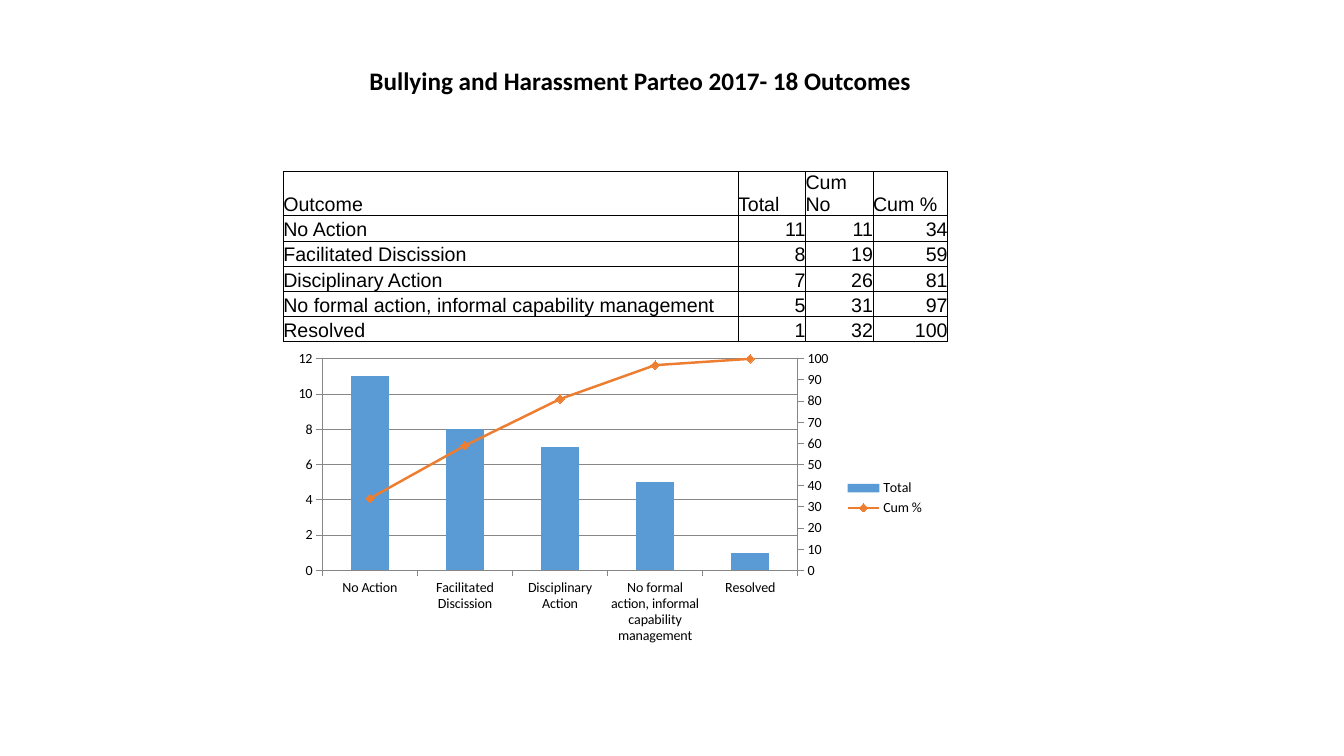
from dataclasses import dataclass

from lxml import etree
from pptx import Presentation
from pptx.chart.axis import ValueAxis
from pptx.chart.data import CategoryChartData
from pptx.dml.color import RGBColor
from pptx.enum.chart import XL_CHART_TYPE, XL_LEGEND_POSITION, XL_MARKER_STYLE, XL_TICK_MARK
from pptx.enum.text import MSO_ANCHOR, PP_ALIGN
from pptx.oxml import parse_xml
from pptx.oxml.ns import nsdecls, qn
from pptx.util import Inches, Pt

COLUMNS = XL_CHART_TYPE.COLUMN_CLUSTERED
LEGEND_RIGHT = XL_LEGEND_POSITION.RIGHT
DIAMOND = XL_MARKER_STYLE.DIAMOND
TICK_OUTSIDE = XL_TICK_MARK.OUTSIDE
TICK_NONE = XL_TICK_MARK.NONE
BOTTOM = MSO_ANCHOR.BOTTOM
LEFT, CENTER, RIGHT = PP_ALIGN.LEFT, PP_ALIGN.CENTER, PP_ALIGN.RIGHT


@dataclass(frozen=True)
class Theme:
    text: RGBColor = RGBColor(0, 0, 0)
    axis: RGBColor = RGBColor(0x86, 0x86, 0x86)
    bar: RGBColor = RGBColor(0x5B, 0x9B, 0xD5)
    line: RGBColor = RGBColor(0xED, 0x7D, 0x31)
    heading_font: str = "Calibri"
    table_font: str = "Arial"
    title_size: Pt = Pt(18)
    table_size: Pt = Pt(14)
    chart_size: Pt = Pt(10)


theme = Theme()


def write_text(frame, text, font, size, align=LEFT, bold=False):
    paragraph = frame.paragraphs[0]
    paragraph.alignment = align
    run = paragraph.add_run()
    run.text = text
    run.font.name = font
    run.font.size = size
    run.font.bold = bold
    run.font.color.rgb = theme.text


presentation = Presentation()
presentation.slide_width = Inches(13.33)
presentation.slide_height = Inches(7.5)
slide = presentation.slides.add_slide(presentation.slide_layouts[6])

headings = ["Outcome", "Total", "Cum No", "Cum %"]
outcomes = [
    ("No Action", 11, 11, 34),
    ("Facilitated Discission", 8, 19, 59),
    ("Disciplinary Action", 7, 26, 81),
    ("No formal action, informal capability management", 5, 31, 97),
    ("Resolved", 1, 32, 100),
]
column_widths = [4.51, 0.67, 0.67, 0.74]
row_heights = [0.44] + [0.25] * len(outcomes)

table = slide.shapes.add_table(
    len(row_heights), len(column_widths),
    Inches(2.81), Inches(1.7), Inches(sum(column_widths)), Inches(sum(row_heights)),
).table
table.first_row = False
table.horz_banding = False
for column, width in zip(table.columns, column_widths):
    column.width = Inches(width)
for row, height in zip(table.rows, row_heights):
    row.height = Inches(height)

for row, values in zip(table.rows, [headings, *outcomes]):
    for cell, value in zip(row.cells, values):
        cell.margin_left = cell.margin_right = cell.margin_top = cell.margin_bottom = 0
        cell.vertical_anchor = BOTTOM
        properties = cell._tc.get_or_add_tcPr()
        for side in ("lnL", "lnR", "lnT", "lnB"):
            border = etree.SubElement(properties, qn(f"a:{side}"), w=str(Pt(0.5)))
            border_fill = etree.SubElement(border, qn("a:solidFill"))
            etree.SubElement(border_fill, qn("a:srgbClr"), val=str(theme.text))
        cell.fill.background()
        align = RIGHT if isinstance(value, int) else LEFT
        write_text(cell.text_frame, str(value), theme.table_font, theme.table_size, align=align)

chart_data = CategoryChartData()
chart_data.categories = [outcome[0] for outcome in outcomes]
chart_data.add_series("Total", [outcome[1] for outcome in outcomes])
chart_data.add_series("Cum %", [outcome[3] for outcome in outcomes])
chart = slide.shapes.add_chart(
    COLUMNS, Inches(2.81), Inches(3.44), Inches(6.46), Inches(3), chart_data
).chart
chart.has_title = False
chart.has_legend = True
chart.legend.position = LEGEND_RIGHT
chart.legend.include_in_layout = False
chart.font.name = theme.heading_font
chart.font.size = theme.chart_size
chart.font.color.rgb = theme.text

bar_plot = chart.plots[0]
bar_plot.gap_width = 150
bar_plot.vary_by_categories = False
cumulative = bar_plot.series[1]._element
for bar_setting in cumulative.findall(qn("c:invertIfNegative")):
    cumulative.remove(bar_setting)

line_chart = parse_xml(
    f'<c:lineChart {nsdecls("c")}><c:grouping val="standard"/><c:varyColors val="0"/>'
    '<c:marker val="1"/><c:axId val="5001"/><c:axId val="5002"/></c:lineChart>'
)
line_chart.insert(2, cumulative)
hidden_axis = parse_xml(
    f'<c:catAx {nsdecls("c")}><c:axId val="5001"/><c:scaling><c:orientation val="minMax"/>'
    '</c:scaling><c:delete val="1"/><c:axPos val="b"/><c:crossAx val="5002"/></c:catAx>'
)
percent_axis = parse_xml(
    f'<c:valAx {nsdecls("c")}><c:axId val="5002"/><c:scaling><c:orientation val="minMax"/>'
    '</c:scaling><c:delete val="0"/><c:axPos val="r"/>'
    '<c:numFmt formatCode="General" sourceLinked="0"/><c:tickLblPos val="nextTo"/>'
    '<c:crossAx val="5001"/><c:crosses val="max"/></c:valAx>'
)
bar_chart = bar_plot._element
plot_area = bar_chart.getparent()
bar_chart.addnext(line_chart)
plot_area.findall(qn("c:valAx"))[-1].addnext(hidden_axis)
hidden_axis.addnext(percent_axis)

for old_layout in plot_area.findall(qn("c:layout")):
    plot_area.remove(old_layout)
layout = parse_xml(
    f'<c:layout {nsdecls("c")}><c:manualLayout><c:layoutTarget val="inner"/>'
    '<c:xMode val="edge"/><c:yMode val="edge"/><c:x val="0.06"/><c:y val="0.04"/>'
    '<c:w val="0.73"/><c:h val="0.7"/></c:manualLayout></c:layout>'
)
plot_area.insert(0, layout)

count_axis = chart.value_axis
right_axis = ValueAxis(percent_axis)
for axis, maximum, step in ((count_axis, 12, 2), (right_axis, 100, 10)):
    axis.minimum_scale = 0
    axis.maximum_scale = maximum
    axis.major_unit = step
for axis in (chart.category_axis, count_axis, right_axis):
    axis.major_tick_mark = TICK_OUTSIDE
    axis.minor_tick_mark = TICK_NONE
    axis.format.line.color.rgb = theme.axis
    axis.format.line.width = Pt(0.75)
count_axis.has_major_gridlines = True
count_axis.major_gridlines.format.line.color.rgb = theme.axis
count_axis.major_gridlines.format.line.width = Pt(0.75)

total_series = chart.plots[0].series[0]
total_series.format.fill.solid()
total_series.format.fill.fore_color.rgb = theme.bar
percent_series = chart.plots[1].series[0]
percent_series.smooth = False
percent_series.format.line.color.rgb = theme.line
percent_series.format.line.width = Pt(1.75)
percent_series.marker.style = DIAMOND
percent_series.marker.size = 6
percent_series.marker.format.fill.solid()
percent_series.marker.format.fill.fore_color.rgb = theme.line
percent_series.marker.format.line.color.rgb = theme.line

title = slide.shapes.add_textbox(Inches(3.28), Inches(0.6), Inches(6.14), Inches(0.4))
title.text_frame.word_wrap = True
write_text(
    title.text_frame, "Bullying and Harassment Parteo 2017- 18 Outcomes",
    theme.heading_font, theme.title_size, align=CENTER, bold=True,
)

presentation.save("out.pptx")
